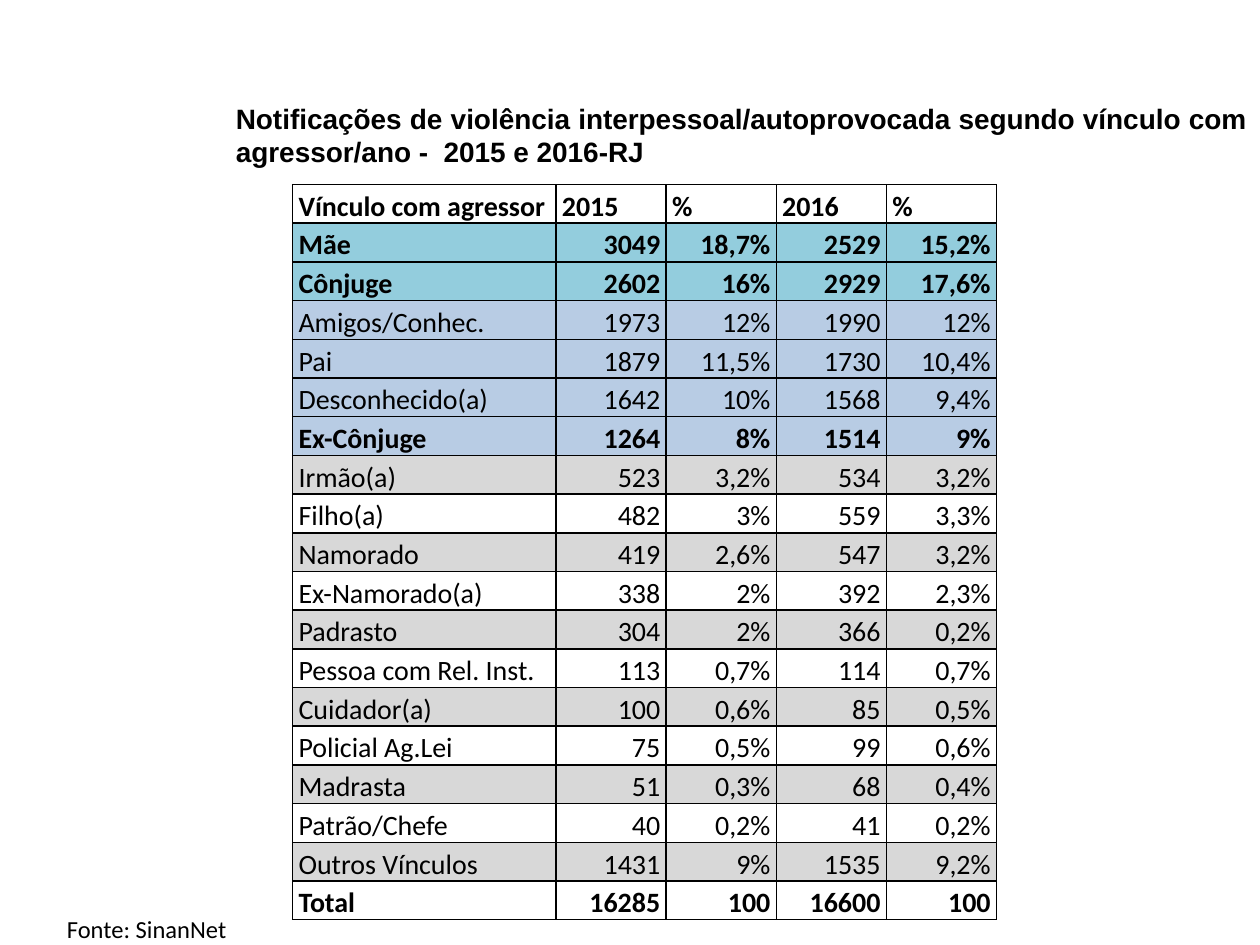
from lxml import etree
from pptx import Presentation
from pptx import util as u
from pptx.dml.color import RGBColor
from pptx.enum import text
from pptx.oxml import ns

BLACK = RGBColor(0x00, 0x00, 0x00)
TEAL = RGBColor(0x93, 0xCD, 0xDD)
BLUE = RGBColor(0xB8, 0xCC, 0xE4)
GRAY = RGBColor(0xD8, 0xD8, 0xD8)

ROWS = [
    ("Vínculo com agressor", "2015", "%", "2016", "%"),
    ("Mãe", "3049", "18,7%", "2529", "15,2%"),
    ("Cônjuge", "2602", "16%", "2929", "17,6%"),
    ("Amigos/Conhec.", "1973", "12%", "1990", "12%"),
    ("Pai", "1879", "11,5%", "1730", "10,4%"),
    ("Desconhecido(a)", "1642", "10%", "1568", "9,4%"),
    ("Ex-Cônjuge", "1264", "8%", "1514", "9%"),
    ("Irmão(a)", "523", "3,2%", "534", "3,2%"),
    ("Filho(a)", "482", "3%", "559", "3,3%"),
    ("Namorado", "419", "2,6%", "547", "3,2%"),
    ("Ex-Namorado(a)", "338", "2%", "392", "2,3%"),
    ("Padrasto", "304", "2%", "366", "0,2%"),
    ("Pessoa com Rel. Inst.", "113", "0,7%", "114", "0,7%"),
    ("Cuidador(a)", "100", "0,6%", "85", "0,5%"),
    ("Policial Ag.Lei", "75", "0,5%", "99", "0,6%"),
    ("Madrasta", "51", "0,3%", "68", "0,4%"),
    ("Patrão/Chefe", "40", "0,2%", "41", "0,2%"),
    ("Outros Vínculos", "1431", "9%", "1535", "9,2%"),
    ("Total", "16285", "100", "16600", "100"),
]
FILLS = [None, TEAL, TEAL] + [BLUE] * 4 + [GRAY, None] * 6
BOLD = {"Vínculo com agressor", "Mãe", "Cônjuge", "Ex-Cônjuge", "Total"}
WIDE, SLIM, HIGH = 5.31, 2.22, 0.78


def style(par, font, size, bold=False):
    for run in par.runs:
        run.font.name = font
        run.font.size = u.Pt(size)
        run.font.bold = bold
        run.font.color.rgb = BLACK


def frame(cell):
    props = cell._tc.get_or_add_tcPr()
    for side in ("lnL", "lnR", "lnT", "lnB"):
        line = etree.SubElement(props, ns.qn("a:" + side), w=str(u.Pt(1)))
        fill = etree.SubElement(line, ns.qn("a:solidFill"))
        etree.SubElement(fill, ns.qn("a:srgbClr"), val=str(BLACK))


prs = Presentation()
prs.slide_width, prs.slide_height = u.Cm(25.4), u.Cm(19.05)
slide = prs.slides.add_slide(prs.slide_layouts[5])

title = slide.shapes.title
title.left, title.top = u.Cm(4.5), u.Cm(1.9)
title.width, title.height = u.Cm(20.9), u.Cm(1.63)
body = title.text_frame
body.text = ("Notificações de violência interpessoal/autoprovocada segundo "
             "vínculo com agressor/ano -  2015 e 2016-RJ")
body.word_wrap = True
body.auto_size = text.MSO_AUTO_SIZE.SHAPE_TO_FIT_TEXT
body.vertical_anchor = text.MSO_ANCHOR.MIDDLE
body.paragraphs[0].alignment = text.PP_ALIGN.JUSTIFY
style(body.paragraphs[0], "Arial", 16, True)

note = slide.shapes.add_textbox(u.Cm(1.1), u.Cm(18.31), u.Cm(5), u.Cm(2.24))
note.text_frame.word_wrap = True
note.text_frame.text = "Fonte: SinanNet"
style(note.text_frame.paragraphs[0], "Calibri", 14)

table = slide.shapes.add_table(
    len(ROWS), 5, u.Cm(5.9), u.Cm(3.72),
    u.Cm(WIDE + 4 * SLIM), u.Cm(HIGH * len(ROWS))).table
table.first_row = table.horz_banding = False
for c, col in enumerate(table.columns):
    col.width = u.Cm(SLIM if c else WIDE)

for r, row in enumerate(ROWS):
    table.rows[r].height = u.Cm(HIGH)
    for c, value in enumerate(row):
        cell = table.cell(r, c)
        cell.margin_left = cell.margin_right = u.Cm(0.12)
        cell.margin_top = cell.margin_bottom = 0
        cell.vertical_anchor = text.MSO_ANCHOR.BOTTOM
        frame(cell)
        if FILLS[r]:
            cell.fill.solid()
            cell.fill.fore_color.rgb = FILLS[r]
        else:
            cell.fill.background()
        par = cell.text_frame.paragraphs[0]
        par.text = value
        par.line_spacing = 1.15
        par.alignment = text.PP_ALIGN.RIGHT if r and c else text.PP_ALIGN.LEFT
        style(par, "Calibri", 16, row[0] in BOLD)

prs.save("out.pptx")
